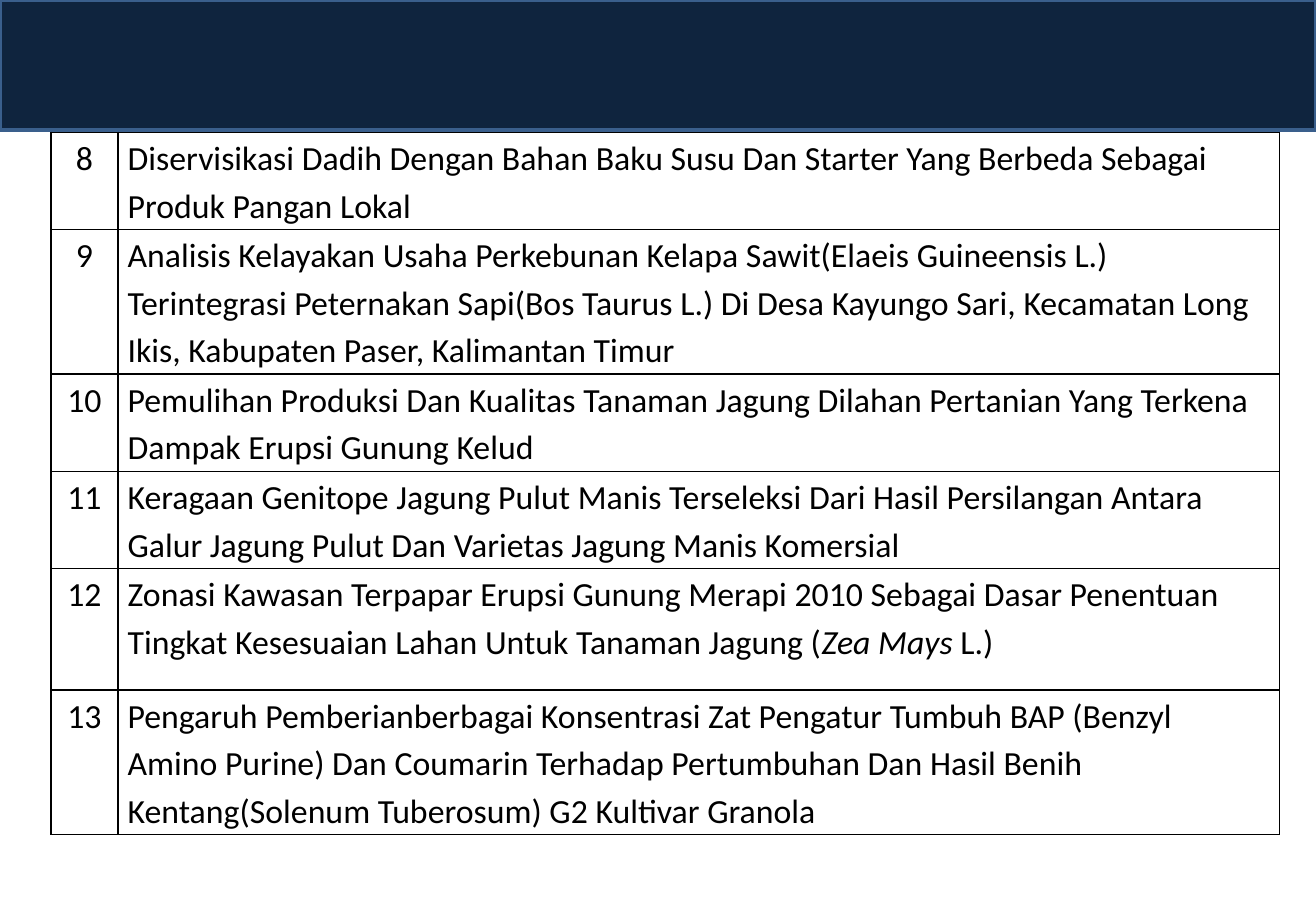
import pptx
import pptx.dml.color
import pptx.enum.shapes
import pptx.enum.text
import pptx.oxml
import pptx.oxml.ns
import pptx.util

NAVY = pptx.dml.color.RGBColor(0x0F, 0x24, 0x3E)
BLUE = pptx.dml.color.RGBColor(0x3A, 0x5F, 0x8C)
BLACK = pptx.dml.color.RGBColor(0, 0, 0)

# Lengths are hundredths of the slide's width or height.
BAND = 14.27
LEFT, TOP = 3.88, 14.53
COLS = (5.08, 88.27)
TWO, WIDE, THREE = 10.67, 13.33, 15.87
FIRST = 8

# Each title is a row height and its text; every second piece is italic.
TITLES = [
    (TWO, ["Diservisikasi Dadih Dengan Bahan Baku Susu Dan Starter Yang "
           "Berbeda Sebagai Produk Pangan Lokal"]),
    (THREE, ["Analisis Kelayakan Usaha Perkebunan Kelapa Sawit(Elaeis "
             "Guineensis L.) Terintegrasi Peternakan Sapi(Bos Taurus L.) Di "
             "Desa Kayungo Sari, Kecamatan Long Ikis, Kabupaten Paser, "
             "Kalimantan Timur"]),
    (TWO, ["Pemulihan Produksi Dan Kualitas Tanaman Jagung Dilahan Pertanian "
           "Yang Terkena Dampak Erupsi Gunung Kelud"]),
    (TWO, ["Keragaan Genitope Jagung Pulut Manis Terseleksi Dari Hasil "
           "Persilangan Antara Galur Jagung Pulut Dan Varietas Jagung Manis "
           "Komersial"]),
    (WIDE, ["Zonasi Kawasan Terpapar Erupsi Gunung Merapi 2010 Sebagai Dasar "
            "Penentuan Tingkat Kesesuaian Lahan Untuk Tanaman Jagung (",
            "Zea Mays", " L.)"]),
    (THREE, ["Pengaruh Pemberianberbagai Konsentrasi Zat Pengatur Tumbuh BAP "
             "(Benzyl Amino Purine) Dan Coumarin Terhadap Pertumbuhan Dan "
             "Hasil Benih Kentang(Solenum Tuberosum) G2 Kultivar Granola"]),
]


class Page:
    """Draws on one slide with a 100 by 100 grid and a shared text style."""
    font, size, lead = "Calibri", pptx.util.Pt(20), 1.15
    rule = pptx.util.Pt(1)

    def __init__(self, deck):
        self.deck = deck
        self.slide = deck.slides.add_slide(deck.slide_layouts[6])

    def x(self, cols):
        return round(self.deck.slide_width * cols / 100)

    def y(self, rows):
        return round(self.deck.slide_height * rows / 100)

    def band(self, rows):
        band = self.slide.shapes.add_shape(
            pptx.enum.shapes.MSO_SHAPE.RECTANGLE, 0, 0, self.x(100), self.y(rows))
        band.shadow.inherit = False
        band.fill.solid()
        band.fill.fore_color.rgb = NAVY
        band.line.color.rgb = BLUE
        band.line.width = pptx.util.Pt(2)

    def table(self, left, top, cols, titles, first):
        high = sum(rows for rows, _ in titles)
        table = self.slide.shapes.add_table(
            len(titles), len(cols), self.x(left), self.y(top),
            self.x(sum(cols)), self.y(high)).table
        table.first_row = table.horz_banding = False
        for col, wide in zip(table.columns, cols):
            col.width = self.x(wide)
        for num, (row, (rows, parts)) in enumerate(zip(table.rows, titles), first):
            row.height = self.y(rows)
            self.cell(row.cells[0], [str(num)], pptx.enum.text.PP_ALIGN.CENTER)
            self.cell(row.cells[1], parts, pptx.enum.text.PP_ALIGN.LEFT)

    def cell(self, cell, parts, align):
        cell.margin_left = cell.margin_right = self.x(0.74)
        cell.margin_top = cell.margin_bottom = 0
        self.edge(cell)
        cell.fill.background()
        para = cell.text_frame.paragraphs[0]
        para.alignment = align
        para.line_spacing = self.lead
        para.font.name = self.font
        para.font.size = self.size
        para.font.color.rgb = BLACK
        for i, part in enumerate(parts):
            run = para.add_run()
            run.text = part
            if i % 2:
                run.font.italic = True

    def edge(self, cell):
        """Rule all four sides of a cell; call before setting its fill."""
        props = cell._tc.get_or_add_tcPr()
        for side in "LRTB":
            props.append(pptx.oxml.parse_xml(
                f'<a:ln{side} {pptx.oxml.ns.nsdecls("a")} w="{self.rule}">'
                f'<a:solidFill><a:srgbClr val="{BLACK}"/></a:solidFill>'
                f'</a:ln{side}>'))


def main():
    deck = pptx.Presentation()
    deck.slide_width = pptx.util.Inches(10.83)
    deck.slide_height = pptx.util.Inches(7.5)
    page = Page(deck)
    page.band(BAND)
    page.table(LEFT, TOP, COLS, TITLES, FIRST)
    deck.save("out.pptx")


if __name__ == "__main__":
    main()
